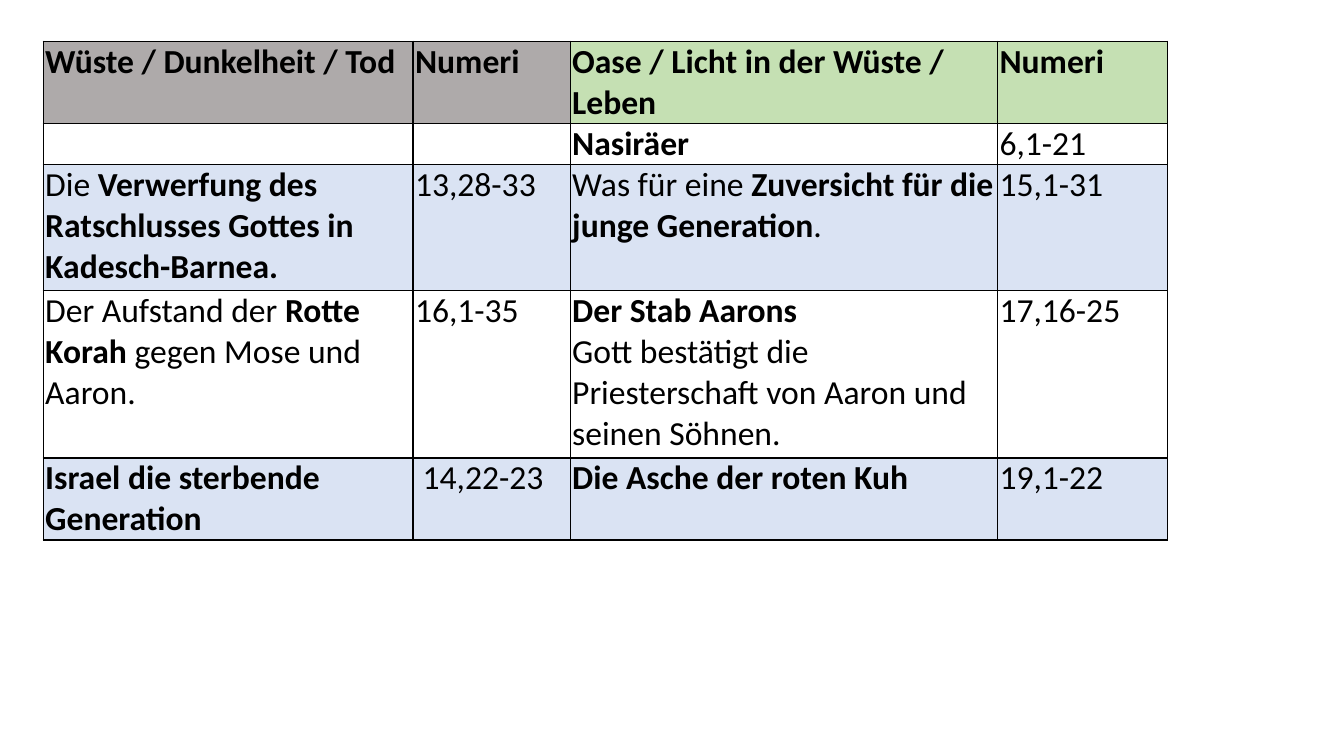
from lxml import etree
from pptx import Presentation
from pptx import util as u
from pptx.dml.color import RGBColor
from pptx.oxml import ns

# Text between asterisks is bold; a line break starts a new paragraph.
HEADINGS = ["*Wüste / Dunkelheit / Tod*", "*Numeri*",
            "*Oase / Licht in der Wüste / Leben*", "*Numeri*"]
PASSAGES = [
    ["", "", "*Nasiräer*", "6,1-21"],
    ["Die *Verwerfung des Ratschlusses Gottes in Kadesch-Barnea.*", "13,28-33",
     "Was für eine *Zuversicht für die junge Generation*.", "15,1-31"],
    ["Der Aufstand der *Rotte Korah* gegen Mose und Aaron.", "16,1-35",
     "*Der Stab Aarons*\nGott bestätigt die Priesterschaft von Aaron und seinen Söhnen.",
     "17,16-25"],
    ["*Israel die sterbende Generation*", " 14,22-23",
     "*Die Asche der roten Kuh*", "19,1-22"],
]
COLUMN_WIDTHS = [9.32, 3.96, 10.77, 4.29]
ROW_HEIGHTS = [2.04, 1.02, 3.18, 4.22, 2.04]
LEFT, TOP, SIDE_MARGIN = 1.09, 1.04, 0.05

BLACK = RGBColor(0x00, 0x00, 0x00)
DESERT_GREY = RGBColor(0xAE, 0xAA, 0xAA)
OASIS_GREEN = RGBColor(0xC5, 0xE0, 0xB3)
BAND_BLUE = RGBColor(0xDA, 0xE3, 0xF3)
FONT, FONT_SIZE, BORDER = "Calibri", u.Pt(24), u.Pt(1)


def fill_color(row, column):
    """Headings by theme, then every second row blue; None means no fill."""
    if row == 0:
        return DESERT_GREY if column < 2 else OASIS_GREEN
    return BAND_BLUE if row % 2 == 0 else None


def write(cell, content):
    """Add the runs, switching bold on and off at each asterisk."""
    for index, line in enumerate(content.split("\n")):
        frame = cell.text_frame
        paragraph = frame.paragraphs[0] if index == 0 else frame.add_paragraph()
        for part, words in enumerate(line.split("*")):
            if words:
                run = paragraph.add_run()
                run.text = words
                run.font.name, run.font.size = FONT, FONT_SIZE
                run.font.bold = part % 2 == 1
                run.font.color.rgb = BLACK


def draw_borders(cell):
    properties = cell._tc.get_or_add_tcPr()
    for position, side in enumerate(("lnL", "lnR", "lnT", "lnB")):
        line = etree.Element(ns.qn(f"a:{side}"), w=str(BORDER))
        solid = etree.SubElement(line, ns.qn("a:solidFill"))
        etree.SubElement(solid, ns.qn("a:srgbClr"), val=str(BLACK))
        properties.insert(position, line)


def main():
    deck = Presentation()
    deck.slide_width, deck.slide_height = u.Cm(33.87), u.Cm(19.05)
    slide = deck.slides.add_slide(deck.slide_layouts[6])

    rows = [HEADINGS] + PASSAGES
    table = slide.shapes.add_table(
        len(rows), len(COLUMN_WIDTHS), u.Cm(LEFT), u.Cm(TOP),
        u.Cm(sum(COLUMN_WIDTHS)), u.Cm(sum(ROW_HEIGHTS))).table
    table.first_row = table.horz_banding = False
    for column, width in zip(table.columns, COLUMN_WIDTHS):
        column.width = u.Cm(width)
    for row, height in zip(table.rows, ROW_HEIGHTS):
        row.height = u.Cm(height)

    for r, contents in enumerate(rows):
        for c, content in enumerate(contents):
            cell = table.cell(r, c)
            cell.margin_left = cell.margin_right = u.Cm(SIDE_MARGIN)
            cell.margin_top = cell.margin_bottom = 0
            color = fill_color(r, c)
            if color is None:
                cell.fill.background()
            else:
                cell.fill.solid()
                cell.fill.fore_color.rgb = color
            draw_borders(cell)
            write(cell, content)

    deck.save("out.pptx")


if __name__ == "__main__":
    main()
